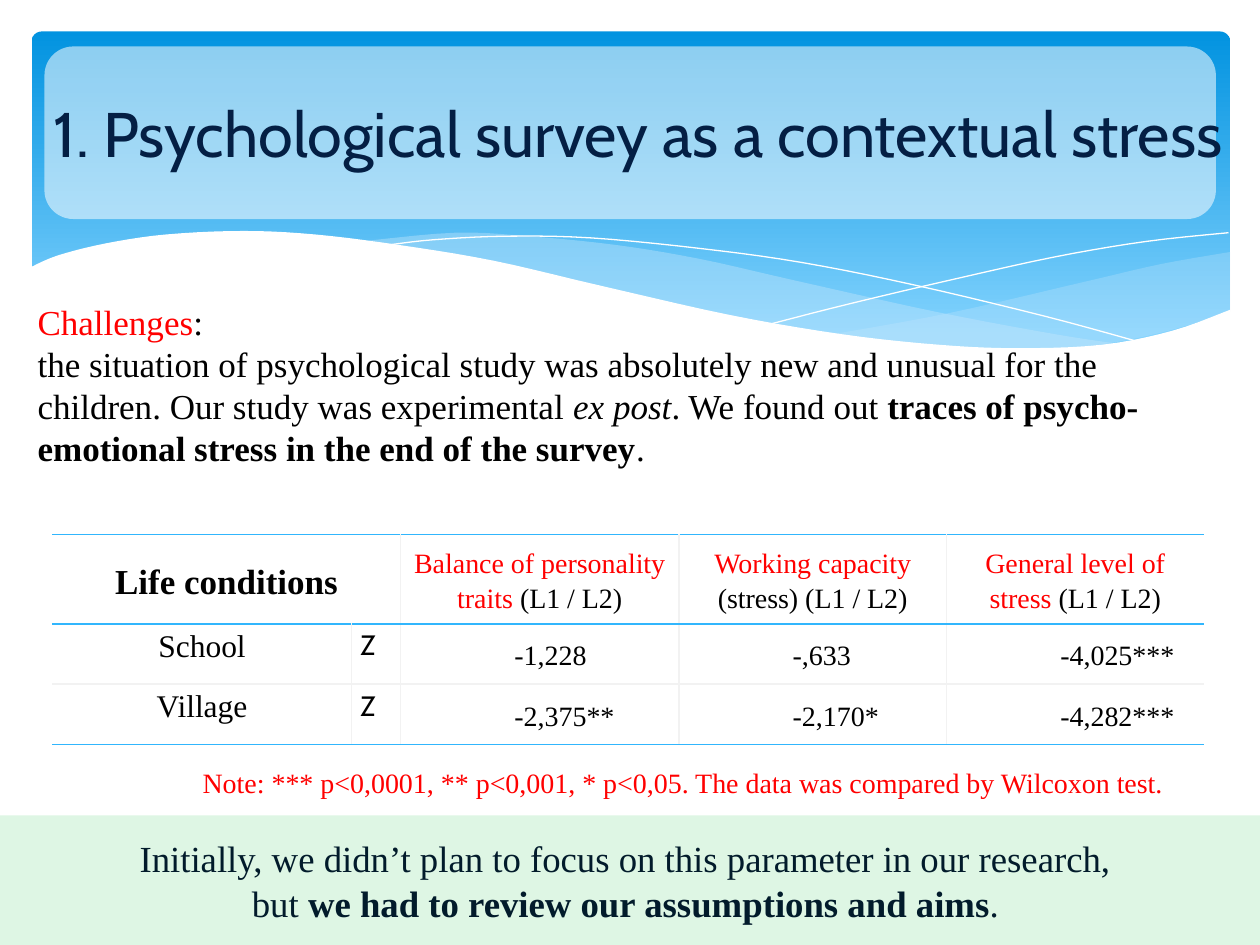
from lxml import etree
from pptx import Presentation
from pptx.dml.color import RGBColor
from pptx.enum.shapes import MSO_SHAPE
from pptx.enum.text import MSO_ANCHOR, PP_ALIGN
from pptx.oxml.ns import qn
from pptx.util import Pt

CENTER, LEFT, JUST = PP_ALIGN.CENTER, PP_ALIGN.LEFT, PP_ALIGN.JUSTIFY
TOP, MIDDLE = MSO_ANCHOR.TOP, MSO_ANCHOR.MIDDLE
RECT, ROUND = MSO_SHAPE.RECTANGLE, MSO_SHAPE.ROUNDED_RECTANGLE
SERIF, SANS = "Times New Roman", "Cabin"
COLORS = {
    "deep": "0293E0", "sky": "83D3FE", "wave": "C6E7FC", "white": "FFFFFF",
    "navy": "041F44", "ink": "021B2B", "black": "000000", "red": "FF0000",
    "mint": "DEF6E4", "blue": "31B6FD", "grey": "F2F2F2",
}

# Wave curves in points from the corner of the band; each curve is smoothed
FAR = [
    [(685, 126), (645, 133), (602, 143), (524, 161), (458, 173)],
    [(458, 173), (490, 177), (527, 181), (568, 182), (610, 179), (650, 171), (685, 160)],
]
NEAR = [
    [(625, 179), (585, 173), (516, 160), (435, 142), (382, 130), (334, 122),
     (284, 117), (242, 115), (188, 120)],
    [(188, 120), (243, 128), (305, 142), (390, 161), (450, 172), (502, 179),
     (555, 182), (593, 181), (625, 179)],
]
FALL = [[(204, 122), (230, 119), (271, 117), (320, 118), (382, 124), (440, 132),
         (505, 145), (580, 163), (635, 178)]]
RISE = [[(423, 167), (466, 156), (521, 143), (584, 129), (637, 120), (684, 115)]]
FRONT = [
    [(685, 159), (652, 171), (612, 179), (564, 181), (518, 179), (463, 173),
     (399, 162), (324, 145), (264, 131), (210, 122), (162, 116), (121, 114),
     (77, 116), (43, 121), (15, 128), (-1, 135)],
    [(-1, 219), (685, 219)],
]

HEADS = [
    [("Balance of personality traits ", "red"), ("(L1 / L2)", "black")],
    [("Working capacity ", "red"), ("(stress) (L1 / L2)", "black")],
    [("General level of stress ", "red"), ("(L1 / L2)", "black")],
]
ROWS = [
    ("School", "Z", "-1,228", "-,633", "-4,025***"),
    ("Village", "Z", "-2,375**", "-2,170*", "-4,282***"),
]


def rgb(name):
    return RGBColor.from_string(COLORS[name])


def paint(shape, name, alpha=100):
    shape.shadow.inherit = False
    shape.line.fill.background()
    shape.fill.solid()
    shape.fill.fore_color.rgb = rgb(name)
    if alpha < 100:
        tone = shape.fill._xPr.find(".//" + qn("a:srgbClr"))
        etree.SubElement(tone, qn("a:alpha"), val=str(alpha * 1000))


def style(par, size, color, font=SERIF, align=LEFT):
    par.alignment = align
    par.font.size, par.font.name = Pt(size), font
    par.font.color.rgb = rgb(color)


def add_run(par, text, color=None, bold=None, italic=None):
    run = par.add_run()
    run.text = text
    if color:
        run.font.color.rgb = rgb(color)
    if bold:
        run.font.bold = True
    if italic:
        run.font.italic = True


def add_text(slide, box):
    frame = slide.shapes.add_textbox(*map(Pt, box)).text_frame
    frame.word_wrap = True
    return frame


def smooth(knots, steps=5):
    """Points of a Catmull-Rom curve through the knots."""
    ends = [knots[0], *knots, knots[-1]]
    points = [knots[0]]
    for a, b, c, d in zip(ends, ends[1:], ends[2:], ends[3:]):
        for t in (n / steps for n in range(1, steps + 1)):
            points.append(tuple(
                (2 * q + (r - p) * t + (2 * p - 5 * q + 4 * r - s) * t ** 2
                 + (3 * q - p - 3 * r + s) * t ** 3) / 2
                for p, q, r, s in zip(a, b, c, d)))
    return points


def add_wave(slide, box, curves, close):
    points = [(Pt(box[0] + x), Pt(box[1] + y))
              for curve in curves for x, y in smooth(curve)]
    path = slide.shapes.build_freeform(*points[0])
    path.add_line_segments(points[1:], close=close)
    return path.convert_to_shape()


def add_band(slide, box):
    band = slide.shapes.add_shape(ROUND, *map(Pt, box))
    paint(band, "deep")
    band.adjustments[0] = 0.03
    band.fill.gradient()
    band.fill.gradient_angle = 270
    for stop, name, place in zip(band.fill.gradient_stops, ("deep", "sky"), (0, 0.9)):
        stop.color.rgb, stop.position = rgb(name), place
    # Tinted waves, thin lines, white front
    paint(add_wave(slide, box, FAR, True), "wave", 29)
    paint(add_wave(slide, box, NEAR, True), "wave", 40)
    for curve in (FALL, RISE):
        line = add_wave(slide, box, curve, False)
        line.shadow.inherit = False
        line.fill.background()
        line.line.color.rgb = rgb("white")
        line.line.width = Pt(0)
    paint(add_wave(slide, box, FRONT, True), "white")


def add_title(slide, box):
    left, top, width, height = box
    panel = slide.shapes.add_shape(ROUND, Pt(left + 11), Pt(top), Pt(width - 24), Pt(height))
    paint(panel, "white", 54)
    title = slide.shapes.title
    title.element.getparent().append(title.element)  # bring to front
    title.left, title.top, title.width, title.height = map(Pt, box)
    frame = title.text_frame
    frame.vertical_anchor = MIDDLE
    frame.margin_right = 0
    frame.text = "1. Psychological survey as a contextual stress"
    style(frame.paragraphs[0], 36, "navy", SANS, CENTER)


def add_body(slide, box):
    frame = add_text(slide, box)
    head, par = frame.paragraphs[0], frame.add_paragraph()
    for item in (head, par):
        style(item, 20, "black")
    add_run(head, "Challenges", "red")
    add_run(head, ":")
    add_run(par, "the situation of psychological study was absolutely new and unusual "
                 "for the children. Our study was experimental ")
    add_run(par, "ex post", italic=True)
    add_run(par, ". We found out ")
    add_run(par, "traces of psycho-emotional stress in the end of the survey", bold=True)
    add_run(par, ".")


def set_edge(cell, side, name):
    edge = etree.SubElement(cell._tc.get_or_add_tcPr(), qn("a:ln" + side), w=str(Pt(1)))
    if name:
        fill = etree.SubElement(edge, qn("a:solidFill"))
        etree.SubElement(fill, qn("a:srgbClr"), val=COLORS[name])
    else:
        etree.SubElement(edge, qn("a:noFill"))


def fill_cell(cell, runs, size, font=SERIF, align=CENTER, anchor=MIDDLE, indent=0, bold=False):
    cell.margin_left = cell.margin_right = Pt(5)
    cell.margin_top = cell.margin_bottom = 0
    cell.vertical_anchor = anchor
    par = cell.text_frame.paragraphs[0]
    style(par, size, "black", font, align)
    par.line_spacing, par.space_after = 1.15, Pt(10)
    if indent:
        par._p.get_or_add_pPr().set("marL", str(Pt(indent)))
    for text, color in runs:
        add_run(par, text, color, bold)


def add_grid(slide, box):
    widths, heights = (171, 28, 159, 153, 147), (51, 34.5, 34.5)
    table = slide.shapes.add_table(3, 5, *map(Pt, box)).table
    table.first_row = table.horz_banding = False
    for col, width in zip(table.columns, widths):
        col.width = Pt(width)
    for row, height in zip(table.rows, heights):
        row.height = Pt(height)
    # Borders and fills
    rules = ("blue", "blue", "grey", "blue")
    for r in range(3):
        for c in range(5):
            cell = table.cell(r, c)
            set_edge(cell, "L", "grey" if c else None)
            set_edge(cell, "R", "grey" if c < 4 else None)
            set_edge(cell, "T", rules[r])
            set_edge(cell, "B", rules[r + 1])
            cell.fill.solid()
            cell.fill.fore_color.rgb = rgb("white")
    # Heads
    table.cell(0, 0).merge(table.cell(0, 1))
    fill_cell(table.cell(0, 0), [("Life conditions", "black")], 20, bold=True)
    for c, runs in enumerate(HEADS, 2):
        fill_cell(table.cell(0, c), runs, 16)
    # Values
    for r, (name, sign, *values) in enumerate(ROWS, 1):
        fill_cell(table.cell(r, 0), [(name, None)], 18, anchor=TOP)
        fill_cell(table.cell(r, 1), [(sign, None)], 16, SANS, JUST, TOP)
        for c, value in enumerate(values, 2):
            fill_cell(table.cell(r, c), [(value, None)], 16, align=LEFT, indent=60)


def add_note(slide, box):
    par = add_text(slide, box).paragraphs[0]
    style(par, 16, "red")
    add_run(par, "Note: *** p<0,0001, ** p<0,001, * p<0,05. "
                 "The data was compared by Wilcoxon test.")


def add_foot(slide, box):
    foot = slide.shapes.add_shape(RECT, *map(Pt, box))
    paint(foot, "mint")
    foot.text_frame.vertical_anchor = MIDDLE
    par = foot.text_frame.paragraphs[0]
    style(par, 21, "ink", align=CENTER)
    add_run(par, "Initially, we didn’t plan to focus on this parameter in our research, ", "ink")
    par.add_line_break()
    add_run(par, "but ", "ink")
    add_run(par, "we had to review our assumptions and aims", "ink", bold=True)
    add_run(par, ". ", "ink")


def main():
    deck = Presentation()
    deck.slide_width, deck.slide_height = Pt(720), Pt(540)
    slide = deck.slides.add_slide(deck.slide_layouts[5])
    add_band(slide, (18, 18, 685, 194))
    add_title(slide, (14.4, 26.6, 693.4, 98.6))
    add_body(slide, (14.4, 168, 693.4, 104.4))
    add_foot(slide, (0, 466, 720, 74))
    add_grid(slide, (30, 305.5, 658, 120))
    add_note(slide, (108.7, 434, 609, 27))
    deck.save("out.pptx")


if __name__ == "__main__":
    main()
